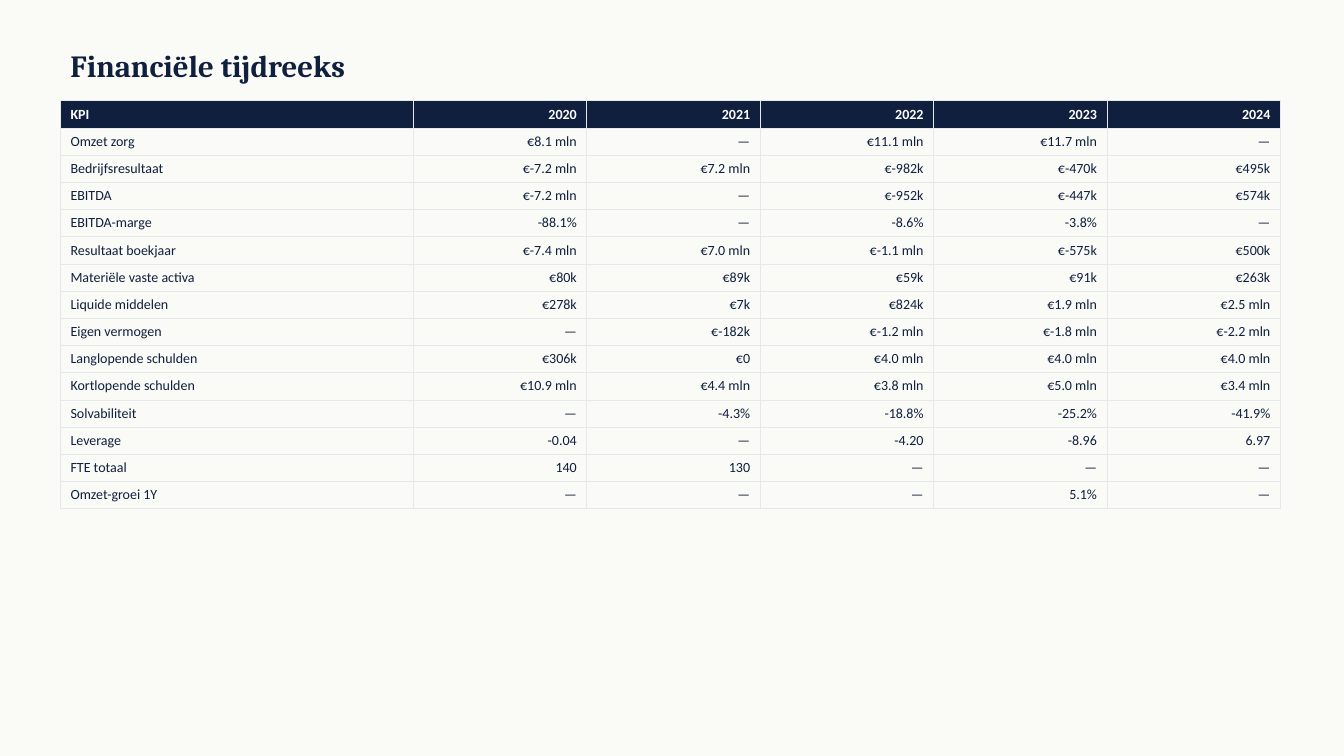
import lxml.etree
import pptx
import pptx.dml.color
import pptx.enum.text
import pptx.oxml.ns
import pptx.util

ALIGN = pptx.enum.text.PP_ALIGN
NAVY, WHITE, PAPER, RULE = "0F1F3D", "FFFFFF", "FAFAF7", "E5E7EB"
KPI_WIDTH, ROW_HEIGHT = 3.5, 0.27
YEARS = ["KPI", "2020", "2021", "2022", "2023", "2024"]
KPIS = [
    ["Omzet zorg", "€8.1 mln", "—", "€11.1 mln", "€11.7 mln", "—"],
    ["Bedrijfsresultaat", "€-7.2 mln", "€7.2 mln", "€-982k", "€-470k", "€495k"],
    ["EBITDA", "€-7.2 mln", "—", "€-952k", "€-447k", "€574k"],
    ["EBITDA-marge", "-88.1%", "—", "-8.6%", "-3.8%", "—"],
    ["Resultaat boekjaar", "€-7.4 mln", "€7.0 mln", "€-1.1 mln", "€-575k", "€500k"],
    ["Materiële vaste activa", "€80k", "€89k", "€59k", "€91k", "€263k"],
    ["Liquide middelen", "€278k", "€7k", "€824k", "€1.9 mln", "€2.5 mln"],
    ["Eigen vermogen", "—", "€-182k", "€-1.2 mln", "€-1.8 mln", "€-2.2 mln"],
    ["Langlopende schulden", "€306k", "€0", "€4.0 mln", "€4.0 mln", "€4.0 mln"],
    ["Kortlopende schulden", "€10.9 mln", "€4.4 mln", "€3.8 mln", "€5.0 mln", "€3.4 mln"],
    ["Solvabiliteit", "—", "-4.3%", "-18.8%", "-25.2%", "-41.9%"],
    ["Leverage", "-0.04", "—", "-4.20", "-8.96", "6.97"],
    ["FTE totaal", "140", "130", "—", "—", "—"],
    ["Omzet-groei 1Y", "—", "—", "—", "5.1%", "—"],
]


def paint(fill, color):
    fill.solid()
    fill.fore_color.rgb = pptx.dml.color.RGBColor.from_string(color)


def write(frame, text, size=10, font="Calibri", color=NAVY, bold=False, align=ALIGN.LEFT):
    para = frame.paragraphs[0]
    para.alignment = align
    span = para.add_run()
    span.text = text
    span.font.size = pptx.util.Pt(size)
    span.font.name = font
    span.font.bold = bold
    paint(span.font.fill, color)


def add_borders(cell, color, points):
    """Draw all four cell borders; call before filling the cell, as the schema orders them."""
    qn = pptx.oxml.ns.qn
    properties = cell._tc.get_or_add_tcPr()
    for side in ("a:lnL", "a:lnR", "a:lnT", "a:lnB"):
        line = lxml.etree.SubElement(properties, qn(side), w=str(pptx.util.Pt(points)))
        solid = lxml.etree.SubElement(line, qn("a:solidFill"))
        lxml.etree.SubElement(solid, qn("a:srgbClr"), val=color)


def add_title(page, text, left, top, width, height):
    box = page.shapes.add_textbox(*map(pptx.util.Inches, (left, top, width, height)))
    box.text_frame.word_wrap = True
    box.text_frame.vertical_anchor = pptx.enum.text.MSO_ANCHOR.MIDDLE
    write(box.text_frame, text, size=22, font="Cambria", bold=True)


def add_kpi_table(page, rows, left, top, width):
    size = (left, top, width, ROW_HEIGHT * len(rows))
    table = page.shapes.add_table(len(rows), len(rows[0]), *map(pptx.util.Inches, size)).table
    table.horz_banding = False
    year_width = (width - KPI_WIDTH) / (len(rows[0]) - 1)
    for number, column in enumerate(table.columns):
        column.width = pptx.util.Inches(year_width if number else KPI_WIDTH)
    for row_number, row in enumerate(rows):
        table.rows[row_number].height = pptx.util.Inches(ROW_HEIGHT)
        header = row_number == 0
        for number, text in enumerate(row):
            cell = table.cell(row_number, number)
            add_borders(cell, RULE, 0.5)
            if header:
                paint(cell.fill, NAVY)
            else:
                cell.fill.background()
            write(cell.text_frame, text, color=WHITE if header else NAVY, bold=header,
                  align=ALIGN.RIGHT if number else ALIGN.LEFT)


def main():
    deck = pptx.Presentation()
    deck.slide_width = pptx.util.Inches(13.33)
    deck.slide_height = pptx.util.Inches(7.5)
    page = deck.slides.add_slide(deck.slide_layouts[6])
    paint(page.background.fill, PAPER)
    add_title(page, "Financiële tijdreeks", 0.6, 0.4, 12, 0.5)
    add_kpi_table(page, [YEARS] + KPIS, 0.6, 1, 12.1)
    deck.save("out.pptx")


if __name__ == "__main__":
    main()
